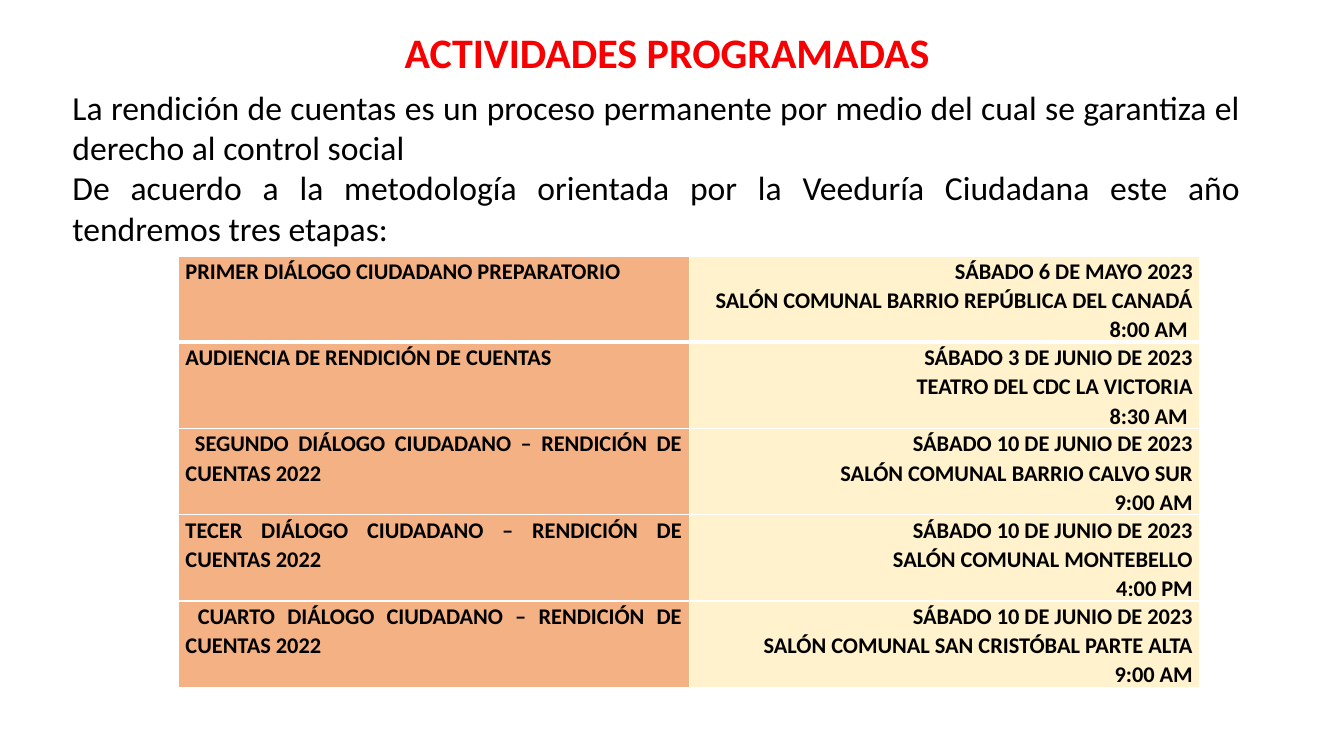
import pptx
import pptx.util
import pptx.dml.color
import pptx.enum.text
import pptx.oxml
import pptx.oxml.ns
from pptx.util import Inches

# Content
TITLE = ["ACTIVIDADES PROGRAMADAS "]
INTRO = [
    "La rendición de cuentas es un proceso permanente por medio del cual se garantiza el derecho al control social ",
    "De acuerdo a la metodología orientada por la Veeduría Ciudadana este año tendremos tres etapas:",
]
EVENTS = [
    ("PRIMER DIÁLOGO CIUDADANO PREPARATORIO ",
     ["SÁBADO 6 DE MAYO 2023", "SALÓN COMUNAL BARRIO REPÚBLICA DEL CANADÁ", "8:00 AM "]),
    ("AUDIENCIA DE RENDICIÓN DE CUENTAS",
     ["SÁBADO 3 DE JUNIO DE 2023", "TEATRO DEL CDC LA VICTORIA", "8:30 AM "]),
    (" SEGUNDO DIÁLOGO CIUDADANO – RENDICIÓN DE CUENTAS 2022",
     ["SÁBADO 10 DE JUNIO DE 2023", "SALÓN COMUNAL BARRIO CALVO SUR", "9:00 AM"]),
    ("TECER DIÁLOGO CIUDADANO – RENDICIÓN DE CUENTAS 2022",
     ["SÁBADO 10 DE JUNIO DE 2023", "SALÓN COMUNAL MONTEBELLO", "4:00 PM"]),
    (" CUARTO DIÁLOGO CIUDADANO – RENDICIÓN DE CUENTAS 2022",
     ["SÁBADO 10 DE JUNIO DE 2023", "SALÓN COMUNAL SAN CRISTÓBAL PARTE ALTA", "9:00 AM"]),
]
RED, BLACK, WHITE = "F60002", "000000", "FFFFFF"
ORANGE, CREAM = "F4B183", "FFF2CC"
ALIGN = pptx.enum.text.PP_ALIGN


def color(code):
    return pptx.dml.color.RGBColor.from_string(code)


def write(frame, lines, size=16, tint=BLACK, bold=False, align=ALIGN.JUSTIFY, space=None):
    frame.word_wrap = True
    for i, line in enumerate(lines):
        para = frame.add_paragraph() if i else frame.paragraphs[0]
        para.alignment = align
        if space:
            para.line_spacing = space
        run = para.add_run()
        run.text = line
        font = run.font
        font.name, font.size, font.bold = "Calibri", pptx.util.Pt(size), bold
        font.color.rgb = color(tint)


def add_text(slide, box, lines, **style):
    frame = slide.shapes.add_textbox(*map(Inches, box)).text_frame
    write(frame, lines, **style)
    frame.auto_size = pptx.enum.text.MSO_AUTO_SIZE.SHAPE_TO_FIT_TEXT


def add_edges(cell, top, bottom):
    props = cell._tc.get_or_add_tcPr()
    widths = {"lnL": 1, "lnR": 1, "lnT": top, "lnB": bottom}
    for i, (tag, width) in enumerate(widths.items()):
        props.insert(i, pptx.oxml.parse_xml(
            f'<a:{tag} {pptx.oxml.ns.nsdecls("a")} w="{pptx.util.Pt(width)}">'
            f'<a:solidFill><a:srgbClr val="{WHITE}"/></a:solidFill></a:{tag}>'))


def add_events(slide, left, top, width, height):
    rows = len(EVENTS)
    grid = slide.shapes.add_table(rows, 2, *map(Inches, (left, top, width, height))).table
    for row, (name, place) in enumerate(EVENTS):
        sides = [([name], ORANGE, ALIGN.JUSTIFY), (place, CREAM, ALIGN.RIGHT)]
        for col, (lines, fill, align) in enumerate(sides):
            cell = grid.cell(row, col)
            cell.margin_left = cell.margin_right = Inches(0.07)
            cell.margin_top = cell.margin_bottom = 0
            cell.fill.solid()
            cell.fill.fore_color.rgb = color(fill)
            # A thick rule parts the first row from the rest
            add_edges(cell, 3 if row == 1 else 1, 3 if row == 0 else 1)
            write(cell.text_frame, lines, bold=True, align=align, space=1.07)


def main():
    deck = pptx.Presentation()
    deck.slide_width, deck.slide_height = Inches(13.33), Inches(7.5)
    slide = deck.slides.add_slide(deck.slide_layouts[6])
    # Heading and introduction
    add_text(slide, (2.64, 0.21, 8.05, 0.61), TITLE,
             size=30, tint=RED, bold=True, align=ALIGN.CENTER)
    add_text(slide, (0.62, 0.81, 11.78, 1.72), INTRO, size=24)
    # Calendar of events
    add_events(slide, 1.77, 2.54, 10.13, 4.25)
    deck.save("out.pptx")


if __name__ == "__main__":
    main()
